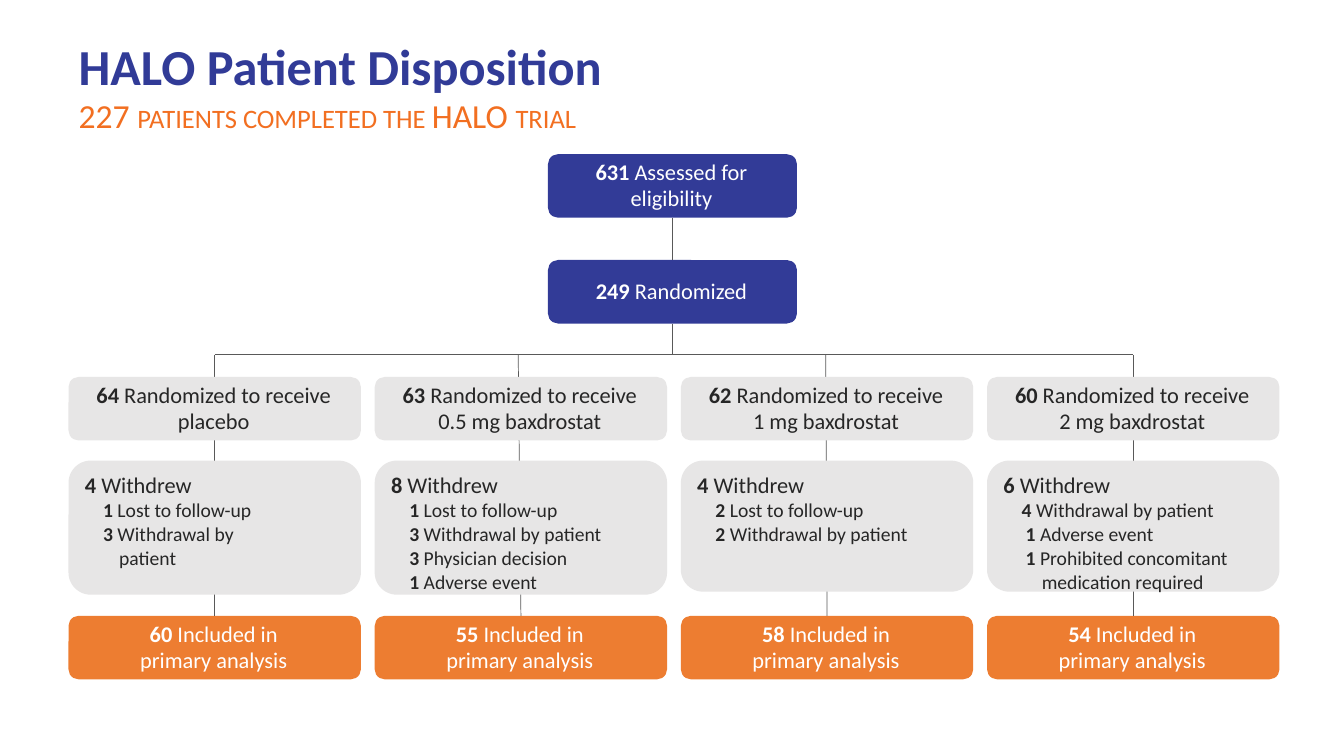
"""Build the HALO patient disposition flow chart slide."""
from pptx import Presentation
from pptx.dml.color import RGBColor as RGB
from pptx.enum.shapes import MSO_CONNECTOR as Line, MSO_SHAPE as Shape
from pptx.enum.text import MSO_ANCHOR as Anchor, PP_ALIGN as Align
from pptx.oxml.xmlchemy import OxmlElement
from pptx.util import Inches, Pt

TITLE = "HALO Patient Disposition"
SUBTITLE = [("227 ", "lead"), ("PATIENTS COMPLETED THE ", "caps"),
            ("HALO ", "lead"), ("TRIAL", "caps")]
TOP_BOXES = [("631", "Assessed for\neligibility"), ("249", "Randomized")]
INCLUDED = "Included in\nprimary analysis"
ARMS = [
    {"randomized": "64", "dose": "placebo", "withdrew": "4", "included": "60",
     "reasons": [("1", "Lost to follow-up", 0.19),
                 ("3", "Withdrawal by\npatient", 0.19)]},
    {"randomized": "63", "dose": "0.5 mg baxdrostat", "withdrew": "8", "included": "55",
     "reasons": [("1", "Lost to follow-up", 0.19),
                 ("3", "Withdrawal by patient", 0.19),
                 ("3", "Physician decision", 0.19),
                 ("1", "Adverse event", 0.19)]},
    {"randomized": "62", "dose": "1 mg baxdrostat", "withdrew": "4", "included": "58",
     "reasons": [("2", "Lost to follow-up", 0.19),
                 ("2", "Withdrawal by patient", 0.19)]},
    {"randomized": "60", "dose": "2 mg baxdrostat", "withdrew": "6", "included": "54",
     "reasons": [("4", "Withdrawal by patient", 0.19),
                 ("1", "Adverse event", 0.23),
                 ("1", "Prohibited concomitant\nmedication required", 0.23)]},
]

THEME = {
    "font": "Calibri",
    "blue": "323B97", "title": "313B97", "accent": "F26F21", "orange": "ED7D31",
    "grey": "E7E6E6", "dark": "262626", "white": "FFFFFF", "line": "595959",
    "size": {"title": 36, "lead": 24, "caps": 19, "box": 16, "reason": 14},
    "leading": {"box": 19, "reason": 17},
}

SLIDE_W, SLIDE_H = 13.33, 7.5
LEFT, RIGHT, COL_W = 0.68, 12.69, 2.9
PITCH = (RIGHT - LEFT - COL_W) / (len(ARMS) - 1)
CENTER, TOP_W, BOX_H = 6.67, 2.47, 0.63
TOP_Y, TOP_PITCH, BUS_Y = 1.53, 1.05, 3.52
ARM_Y, WITHDREW_Y, INCLUDED_Y = 3.74, 4.57, 6.11
CARD_H = [1.33, 1.33, 1.3, 1.3]
STEM_X = [2.13, 5.14, 8.19, 11.24]
BOX_RADIUS, CARD_RADIUS, HANG = 0.1, 0.22, 0.16

prs = Presentation()
prs.slide_width, prs.slide_height = Inches(SLIDE_W), Inches(SLIDE_H)
shapes = prs.slides.add_slide(prs.slide_layouts[6]).shapes


def set_all(obj, values):
    for name, value in values.items():
        setattr(obj, name, value)


def add_run(p, text, size, color, bold=False):
    r = p.add_run()
    r.text = text
    set_all(r.font, {"name": THEME["font"], "size": Pt(THEME["size"][size]), "bold": bold})
    r.font.color.rgb = RGB.from_string(THEME[color])


def add_count(p, number, text, size, color):
    p.line_spacing = Pt(THEME["leading"][size])
    add_run(p, number + " ", size, color, True)
    for i, part in enumerate(text.split("\n")):
        if i:
            p.add_line_break()
        add_run(p, part, size, color)


def set_frame(tf, anchor, left=0, top=0, right=0, bottom=0):
    set_all(tf, {"word_wrap": True, "vertical_anchor": anchor,
                 "margin_left": Inches(left), "margin_top": Inches(top),
                 "margin_right": Inches(right), "margin_bottom": Inches(bottom)})


def add_heading(y, w, h, runs, color, bold=False):
    tf = shapes.add_textbox(Inches(0.78), Inches(y), Inches(w), Inches(h)).text_frame
    set_frame(tf, Anchor.TOP)
    for text, size in runs:
        add_run(tf.paragraphs[0], text, size, color, bold)


def add_box(x, y, w, h, fill, radius=BOX_RADIUS):
    sp = shapes.add_shape(Shape.ROUNDED_RECTANGLE, *map(Inches, (x, y, w, h)))
    sp.adjustments[0] = radius / h
    sp.shadow.inherit = False
    sp.fill.solid()
    sp.fill.fore_color.rgb = RGB.from_string(THEME[fill])
    sp.line.fill.background()
    return sp


def add_count_box(x, y, w, fill, number, text, color):
    sp = add_box(x, y, w, BOX_H, fill)
    set_frame(sp.text_frame, Anchor.MIDDLE, right=0.02, bottom=0.02)
    p = sp.text_frame.paragraphs[0]
    p.alignment = Align.CENTER
    add_count(p, number, text, "box", color)
    return sp


def add_withdrawal_card(x, h, arm):
    sp = add_box(x, WITHDREW_Y, COL_W, h, "grey", CARD_RADIUS)
    tf = sp.text_frame
    set_frame(tf, Anchor.TOP, 0.1, 0.04)
    tf.paragraphs[0].alignment = Align.LEFT
    add_count(tf.paragraphs[0], arm["withdrew"], "Withdrew", "box", "dark")
    for number, reason, indent in arm["reasons"]:
        p = tf.add_paragraph()
        p.alignment = Align.LEFT
        pPr = p._p.get_or_add_pPr()
        pPr.set("marL", str(Inches(indent - 0.01 + HANG)))
        pPr.set("indent", str(-Inches(HANG)))
        add_count(p, number, reason, "reason", "dark")


def add_line(start, end, above=None, below=None):
    c = shapes.add_connector(Line.STRAIGHT, *map(Inches, (*start, *end)))
    c.line.width = Pt(0.5)
    c.line.color.rgb = RGB.from_string(THEME["line"])
    c._element.spPr.append(OxmlElement("a:effectLst"))
    if above:
        c.begin_connect(above, 2)
    if below:
        c.end_connect(below, 0)


add_heading(0.35, 5.23, 0.63, [(TITLE, "title")], "title", True)
add_heading(0.94, 6.68, 0.45, SUBTITLE, "accent")

assessed, randomized = [
    add_count_box(CENTER - TOP_W / 2, TOP_Y + i * TOP_PITCH, TOP_W, "blue", *box, "white")
    for i, box in enumerate(TOP_BOXES)]
randomized_y = TOP_Y + TOP_PITCH
add_line((CENTER, TOP_Y + BOX_H), (CENTER, randomized_y), assessed, randomized)
add_line((CENTER, randomized_y + BOX_H), (CENTER, BUS_Y), randomized)
add_line((STEM_X[0], BUS_Y), (STEM_X[-1], BUS_Y))

for i, (arm, card_h, stem_x) in enumerate(zip(ARMS, CARD_H, STEM_X)):
    x = LEFT + i * PITCH
    included = add_count_box(x, INCLUDED_Y, COL_W, "orange", arm["included"], INCLUDED, "white")
    add_line((stem_x, BUS_Y), (x + COL_W / 2, INCLUDED_Y), below=included)
    add_count_box(x, ARM_Y, COL_W, "grey", arm["randomized"],
                  "Randomized to receive\n" + arm["dose"], "dark")
    add_withdrawal_card(x, card_h, arm)

prs.save("out.pptx")
